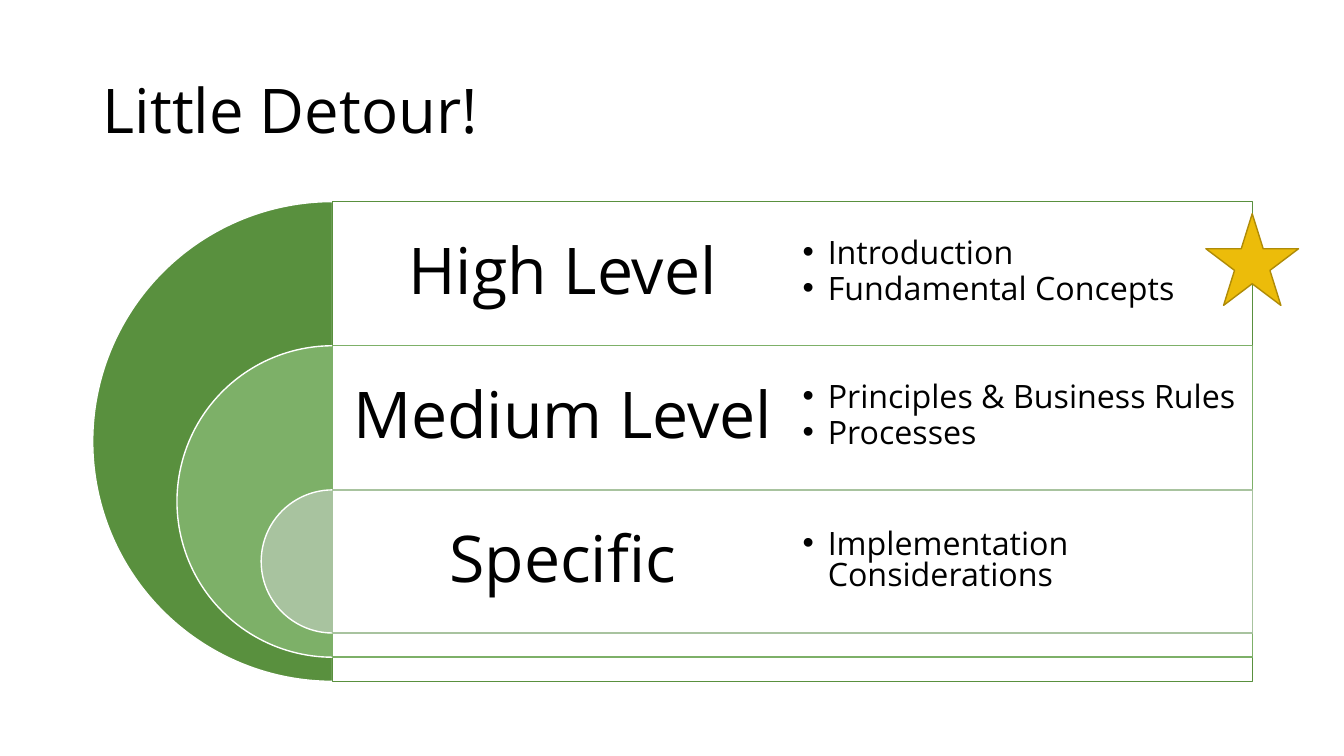
"""Build the 'Little Detour!' slide with three nested levels of detail."""
from dataclasses import dataclass

from lxml.etree import SubElement
from pptx import Presentation
from pptx.dml.color import RGBColor as RGB
from pptx.enum.shapes import MSO_SHAPE as Preset
from pptx.enum.text import MSO_ANCHOR as Anchor, MSO_AUTO_SIZE as AutoSize, PP_ALIGN as Align
from pptx.oxml.ns import qn
from pptx.util import Inches, Pt


@dataclass(frozen=True)
class Theme:
    """Colours and type sizes of the slide."""
    font: str = "Open Sans"
    text: str = "000000"
    paper: str = "FFFFFF"
    levels: tuple = ("59903E", "7DB068", "A8C39F")
    star: str = "ECBC0A"
    star_edge: str = "AF8B07"
    title_size: int = 44
    label_size: int = 46
    item_size: int = 23


def apply(target, values):
    """Set each named attribute on the target."""
    for name, value in values.items():
        setattr(target, name, value)


class LevelSlide:
    """Holds the theme and the current slide and draws its elements."""

    def __init__(self, slide, theme):
        self.slide = slide
        self.theme = theme

    def place(self, shape, box):
        """Move a shape to a left, top, width, height box."""
        apply(shape, dict(zip(("left", "top", "width", "height"), map(Inches, box))))

    def set_text(self, shape, lines, size, align, margins, spacing=0.9, after=0, bullet=None):
        """Fill a shape with formatted paragraphs."""
        frame = shape.text_frame
        side, end = map(Inches, margins)
        apply(frame, {"word_wrap": True, "auto_size": AutoSize.NONE,
                      "vertical_anchor": Anchor.MIDDLE,
                      "margin_left": side, "margin_right": side,
                      "margin_top": end, "margin_bottom": end})
        for index, line in enumerate(lines):
            paragraph = frame.add_paragraph() if index else frame.paragraphs[0]
            if bullet:
                properties = paragraph._p.get_or_add_pPr()
                properties.set("marL", str(Inches(0.25)))
                properties.set("indent", str(Inches(-0.25)))
                SubElement(properties, qn("a:buFont"), typeface="Arial")
                SubElement(properties, qn("a:buChar"), char=bullet)
            apply(paragraph, {"alignment": align, "line_spacing": spacing,
                              "space_before": Pt(0), "space_after": Pt(after)})
            run = paragraph.add_run()
            run.text = line
            apply(run.font, {"name": self.theme.font, "size": Pt(size), "bold": False})
            run.font.color.rgb = RGB.from_string(self.theme.text)

    def title(self, text, box):
        """Fill the title placeholder."""
        heading = self.slide.shapes.title
        self.place(heading, box)
        self.set_text(heading, [text], self.theme.title_size, Align.LEFT, (0.1, 0.05))

    def label(self, text, box):
        """Add a large centred level name."""
        name = self.slide.shapes.add_textbox(*map(Inches, box))
        self.set_text(name, [text], self.theme.label_size, Align.CENTER, (0.19, 0.19))

    def topics(self, number, items, box):
        """Fill a body placeholder with bullets, in front of the panels."""
        body = self.slide.placeholders[number]
        self.slide.shapes.element.append(body.element)
        self.place(body, box)
        self.set_text(body, items, self.theme.item_size, Align.LEFT, (0.1, 0.1),
                      spacing=0.78, after=4.3, bullet="•")

    def figure(self, preset, box, fill, edge, opacity=None, angles=()):
        """Add a filled and outlined preset shape."""
        shape = self.slide.shapes.add_shape(preset, *map(Inches, box))
        shape.shadow.inherit = False
        shape.fill.solid()
        shape.fill.fore_color.rgb = RGB.from_string(fill)
        shape.line.color.rgb = RGB.from_string(edge)
        shape.line.width = Pt(1)
        for index, angle in enumerate(angles):
            shape.adjustments[index] = angle
        if opacity:
            color = shape.element.spPr.find(qn("a:solidFill"))[0]
            SubElement(color, qn("a:alpha"), val=str(opacity * 1000))

    def drop_placeholder(self, number):
        """Remove an unused placeholder."""
        unused = self.slide.placeholders[number].element
        unused.getparent().remove(unused)


def main():
    """Compose and save the slide."""
    deck = Presentation()
    apply(deck, {"slide_width": Inches(13.33), "slide_height": Inches(7.5)})
    theme = Theme()
    page = LevelSlide(deck.slides.add_slide(deck.slide_layouts[4]), theme)
    page.title("Little Detour!", (0.92, 0.4, 11.5, 1.45))

    levels = (("High Level", ["Introduction", "Fundamental Concepts"]),
              ("Medium Level", ["Principles & Business Rules", "Processes"]),
              ("Specific", ["Implementation Considerations"]))
    center, top, row, column = 3.3, 2, 1.43, 4.56
    outer, step = 4.76, 1.67
    for index, ((name, items), color) in enumerate(zip(levels, theme.levels)):
        y = top + index * row
        diameter = outer - index * step
        page.figure(Preset.PIE, (center - diameter / 2, y, diameter, diameter),
                    color, theme.paper, angles=(54, 162))
        page.figure(Preset.RECTANGLE, (center, y, 2 * column, diameter),
                    theme.paper, color, opacity=90)
        page.label(name, (center, y, column, row))
        page.topics(index + 1, items, (center + column, y, column, row))

    page.drop_placeholder(4)
    page.figure(Preset.STAR_5_POINT, (11.96, 2.12, 0.92, 0.91), theme.star, theme.star_edge)
    deck.save("out.pptx")


if __name__ == "__main__":
    main()
